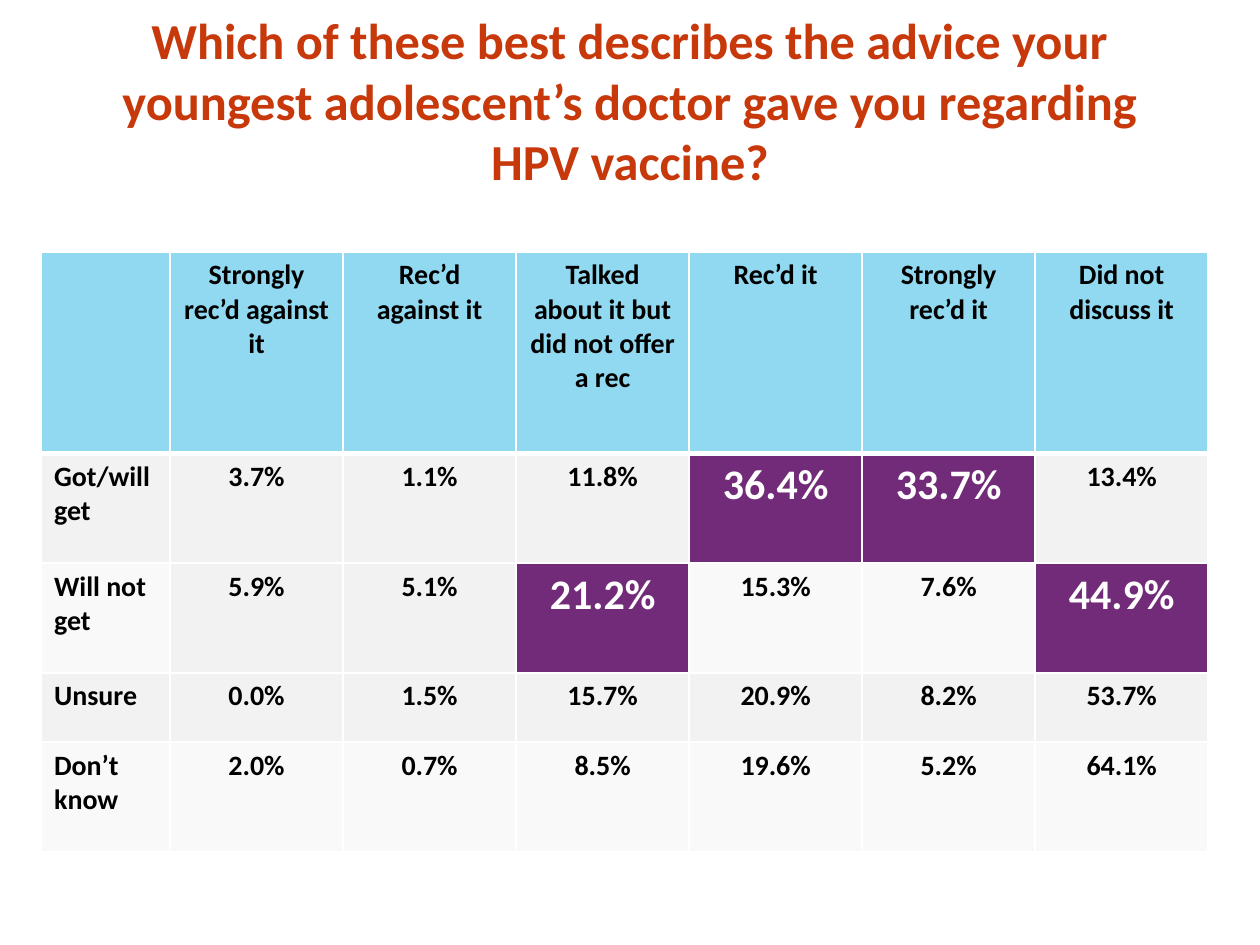
from dataclasses import dataclass, field

import pptx
import pptx.dml.color
import pptx.enum.text
import pptx.oxml
import pptx.oxml.ns
import pptx.util

Inches = pptx.util.Inches
ALIGN = pptx.enum.text.PP_ALIGN

HEADER_BLUE, PALE_GREY, NEAR_WHITE = "90D9F0", "F2F2F2", "F9F9F9"
PURPLE, WHITE, BLACK, RUST = "722B79", "FFFFFF", "000000", "C7380B"


@dataclass(frozen=True)
class Answer:
    label: str
    entries: tuple[str, ...]
    height: float
    fill: str
    bottom_border: float = 1
    fill_exceptions: dict[int, str] = field(default_factory=dict)


ADVICE = Answer(
    "",
    (
        "Strongly rec’d against it",
        "Rec’d against it",
        "Talked about it but did not offer a rec",
        "Rec’d it",
        "Strongly rec’d it",
        "Did not discuss it",
    ),
    1.6, HEADER_BLUE, bottom_border=3,
)
ANSWERS = (
    Answer("Got/will get", ("3.7%", "1.1%", "11.8%", "36.4%", "33.7%", "13.4%"),
           0.87, PALE_GREY, fill_exceptions={4: PURPLE, 5: PURPLE}),
    Answer("Will not get", ("5.9%", "5.1%", "21.2%", "15.3%", "7.6%", "44.9%"),
           0.87, NEAR_WHITE,
           fill_exceptions={1: PALE_GREY, 2: PALE_GREY, 3: PURPLE, 6: PURPLE}),
    Answer("Unsure", ("0.0%", "1.5%", "15.7%", "20.9%", "8.2%", "53.7%"),
           0.55, PALE_GREY),
    Answer("Don’t know", ("2.0%", "0.7%", "8.5%", "19.6%", "5.2%", "64.1%"),
           0.87, NEAR_WHITE),
)


def rgb(value: str) -> pptx.dml.color.RGBColor:
    return pptx.dml.color.RGBColor.from_string(value)


def format_font(font, size: float, color: str) -> None:
    formats = {"name": "Calibri", "size": pptx.util.Pt(size), "bold": True}
    for attribute, value in formats.items():
        setattr(font, attribute, value)
    font.color.rgb = rgb(color)


def add_borders(cell, bottom: float) -> None:
    properties = cell._tc.get_or_add_tcPr()
    for side, points in {"L": 1, "R": 1, "T": 1, "B": bottom}.items():
        properties.append(pptx.oxml.parse_xml(
            f'<a:ln{side} {pptx.oxml.ns.nsdecls("a")} w="{pptx.util.Pt(points)}">'
            f'<a:solidFill><a:srgbClr val="{WHITE}"/></a:solidFill></a:ln{side}>'
        ))


def fill_cell(cell, text: str, fill: str, bottom: float, align) -> None:
    add_borders(cell, bottom)
    cell.fill.solid()
    cell.fill.fore_color.rgb = rgb(fill)
    cell.text = text
    paragraph = cell.text_frame.paragraphs[0]
    paragraph.alignment = align
    size, color = (24, WHITE) if fill == PURPLE else (16, BLACK)
    format_font(paragraph.font, size, color)
    for run in paragraph.runs:
        format_font(run.font, size, color)


def add_responses(slide) -> None:
    answers = (ADVICE, *ANSWERS)
    column_count = len(ADVICE.entries) + 1
    width, label_width = 9.26, 1.02
    entry_width = (width - label_width) / len(ADVICE.entries)
    responses = slide.shapes.add_table(
        len(answers), column_count, Inches(0.33), Inches(2), Inches(width),
        Inches(sum(answer.height for answer in answers)),
    ).table
    for index, column in enumerate(responses.columns):
        column.width = Inches(entry_width if index else label_width)
    for row_index, answer in enumerate(answers):
        responses.rows[row_index].height = Inches(answer.height)
        for column_index, text in enumerate((answer.label, *answer.entries)):
            fill_cell(
                responses.cell(row_index, column_index), text,
                answer.fill_exceptions.get(column_index, answer.fill),
                answer.bottom_border,
                ALIGN.CENTER if column_index else ALIGN.LEFT,
            )


def place_question(question) -> None:
    bounds = {"left": 0.5, "top": 0.17, "width": 9, "height": 1.25}
    for attribute, value in bounds.items():
        setattr(question, attribute, Inches(value))
    frame = question.text_frame
    frame.text = ("Which of these best describes the advice your youngest "
                  "adolescent’s doctor gave you regarding HPV vaccine?")
    frame.word_wrap = True
    frame.auto_size = pptx.enum.text.MSO_AUTO_SIZE.NONE
    frame.vertical_anchor = pptx.enum.text.MSO_ANCHOR.MIDDLE
    frame.paragraphs[0].alignment = ALIGN.CENTER
    format_font(frame.paragraphs[0].runs[0].font, 28.8, RUST)


def main() -> None:
    deck = pptx.Presentation()
    deck.slide_width, deck.slide_height = Inches(10), Inches(7.5)
    slide = deck.slides.add_slide(deck.slide_layouts[5])
    place_question(slide.shapes.title)
    add_responses(slide)
    deck.save("out.pptx")


if __name__ == "__main__":
    main()
